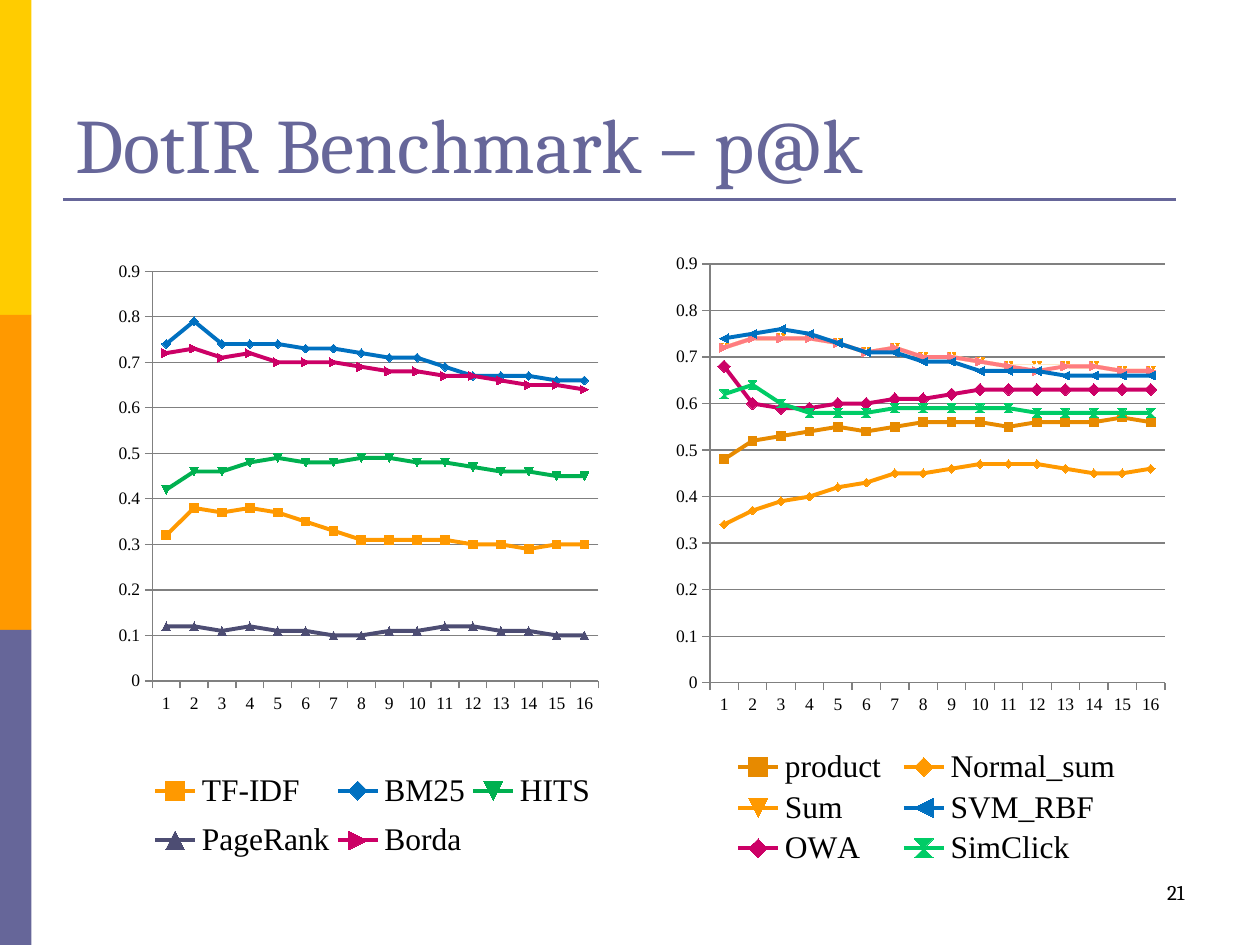
from dataclasses import dataclass

from pptx import Presentation
from pptx.chart.data import CategoryChartData
from pptx.dml.color import RGBColor
from pptx.enum.chart import XL_CHART_TYPE as ChartType
from pptx.enum.chart import XL_LEGEND_POSITION as LegendPos
from pptx.enum.chart import XL_MARKER_STYLE as Marker
from pptx.enum.chart import XL_TICK_MARK as Tick
from pptx.enum.shapes import MSO_CONNECTOR, MSO_SHAPE
from pptx.enum.text import MSO_ANCHOR, PP_ALIGN
from pptx.oxml import parse_xml
from pptx.oxml.ns import nsdecls, qn
from pptx.util import Pt

Box = tuple[float, float, float, float]


@dataclass(frozen=True)
class Theme:
    font: str = "Cambria"
    chart_font: str = "Times New Roman"
    title_size: int = 44
    legend_size: int = 18
    number_size: int = 12
    axis_size: int = 10
    yellow: str = "FFCC00"
    orange: str = "FF9900"
    purple: str = "666699"
    brown: str = "E78A00"
    blue: str = "0070C0"
    green: str = "00B050"
    mint: str = "00CC66"
    navy: str = "4D4D73"
    crimson: str = "CC0066"
    pink: str = "FF7C80"
    white: str = "FFFFFF"
    black: str = "000000"
    grid: str = "808080"


@dataclass(frozen=True)
class Series:
    name: str
    color: str
    values: list[float]
    marker: Marker = Marker.AUTOMATIC
    marker_size: int = 5
    in_legend: bool = True


@dataclass(frozen=True)
class ChartSpec:
    """box is in points; plot and legend are fractions of the chart."""
    box: Box
    plot: Box
    legend: Box
    series: list[Series]


T = Theme()
SUM = [0.72, 0.74, 0.74, 0.74, 0.73, 0.71, 0.72, 0.7,
       0.7, 0.69, 0.68, 0.68, 0.68, 0.68, 0.67, 0.67]

BASELINES = ChartSpec(
    box=(54, 144, 300, 366),
    plot=(0.11, 0.03, 0.85, 0.64),
    legend=(0.1, 0.79, 0.86, 0.18),
    series=[
        Series("TF-IDF", T.orange, [0.32, 0.38, 0.37, 0.38, 0.37, 0.35, 0.33, 0.31,
                                    0.31, 0.31, 0.31, 0.3, 0.3, 0.29, 0.3, 0.3]),
        Series("BM25", T.blue, [0.74, 0.79, 0.74, 0.74, 0.74, 0.73, 0.73, 0.72,
                                0.71, 0.71, 0.69, 0.67, 0.67, 0.67, 0.66, 0.66]),
        Series("HITS", T.green, [0.42, 0.46, 0.46, 0.48, 0.49, 0.48, 0.48, 0.49,
                                 0.49, 0.48, 0.48, 0.47, 0.46, 0.46, 0.45, 0.45]),
        Series("PageRank", T.navy, [0.12, 0.12, 0.11, 0.12, 0.11, 0.11, 0.1, 0.1,
                                    0.11, 0.11, 0.12, 0.12, 0.11, 0.11, 0.1, 0.1]),
        Series("Borda", T.crimson, [0.72, 0.73, 0.71, 0.72, 0.7, 0.7, 0.7, 0.69,
                                    0.68, 0.68, 0.67, 0.67, 0.66, 0.65, 0.65, 0.64]),
    ])

COMBINATIONS = ChartSpec(
    box=(372, 120, 306, 386),
    plot=(0.11, 0.08, 0.85, 0.62),
    legend=(0.14, 0.79, 0.75, 0.19),
    series=[
        Series("product", T.brown, [0.48, 0.52, 0.53, 0.54, 0.55, 0.54, 0.55, 0.56,
                                    0.56, 0.56, 0.55, 0.56, 0.56, 0.56, 0.57, 0.56]),
        Series("Normal_sum", T.orange, [0.34, 0.37, 0.39, 0.4, 0.42, 0.43, 0.45, 0.45,
                                        0.46, 0.47, 0.47, 0.47, 0.46, 0.45, 0.45, 0.46]),
        Series("Sum", T.orange, SUM),
        Series("Series 4", T.white, SUM, in_legend=False),
        Series("Series 5", T.pink, SUM[:11] + [0.67] + SUM[12:], in_legend=False),
        Series("SVM_RBF", T.blue, [0.74, 0.75, 0.76, 0.75, 0.73, 0.71, 0.71, 0.69,
                                   0.69, 0.67, 0.67, 0.67, 0.66, 0.66, 0.66, 0.66]),
        Series("OWA", T.crimson, [0.68, 0.6, 0.59, 0.59, 0.6, 0.6, 0.61, 0.61,
                                  0.62, 0.63, 0.63, 0.63, 0.63, 0.63, 0.63, 0.63],
               Marker.DIAMOND, 7),
        Series("SimClick", T.mint, [0.62, 0.64, 0.6, 0.58, 0.58, 0.58, 0.59, 0.59,
                                    0.59, 0.59, 0.59, 0.58, 0.58, 0.58, 0.58, 0.58]),
    ])


def rgb(color: str) -> RGBColor:
    return RGBColor.from_string(color)


def set_font(font, name: str, size: int, color: str) -> None:
    font.name, font.size = name, Pt(size)
    font.color.rgb = rgb(color)


def set_line(line, color: str, width: float) -> None:
    line.color.rgb = rgb(color)
    line.width = Pt(width)


def set_layout(parent, index: int, box: Box, inner: bool = False) -> None:
    """Give a plot area or legend a fixed place within its chart."""
    for old in parent.findall(qn("c:layout")):
        parent.remove(old)
    target = '<c:layoutTarget val="inner"/>' if inner else ""
    modes = "".join(f'<c:{k}Mode val="edge"/>' for k in "xy")
    sizes = "".join(f'<c:{k} val="{v}"/>' for k, v in zip("xywh", box))
    parent.insert(index, parse_xml(
        f'<c:layout {nsdecls("c")}><c:manualLayout>{target}{modes}{sizes}'
        '</c:manualLayout></c:layout>'))


def add_bar(slide, top: float, color: str) -> None:
    s = slide.shapes.add_shape(MSO_SHAPE.RECTANGLE, 0, Pt(top), Pt(18), Pt(180))
    s.shadow.inherit = False
    s.fill.solid()
    s.fill.fore_color.rgb = rgb(color)
    s.line.fill.background()


def add_rule(slide) -> None:
    c = slide.shapes.add_connector(MSO_CONNECTOR.STRAIGHT, Pt(36), Pt(114), Pt(672), Pt(114))
    set_line(c.line, T.purple, 1.5)
    c.element.spPr.append(parse_xml(f'<a:effectLst {nsdecls("a")}/>'))


def add_title(slide, text: str) -> None:
    s = slide.shapes.title
    s.left, s.top, s.width, s.height = Pt(36), Pt(21.6), Pt(648), Pt(90)
    tf = s.text_frame
    tf.text, tf.vertical_anchor = text, MSO_ANCHOR.BOTTOM
    p = tf.paragraphs[0]
    p.alignment = PP_ALIGN.LEFT
    set_font(p.font, T.font, T.title_size, T.purple)


def add_page_number(slide, text: str) -> None:
    tf = slide.shapes.add_textbox(Pt(516), Pt(492), Pt(168), Pt(36)).text_frame
    tf.word_wrap, tf.vertical_anchor = True, MSO_ANCHOR.MIDDLE
    p = tf.paragraphs[0]
    p.text, p.alignment = text, PP_ALIGN.RIGHT
    set_font(p.font, T.font, T.number_size, T.black)


def style_legend(chart, spec: ChartSpec) -> None:
    chart.has_legend = True
    chart.legend.position = LegendPos.BOTTOM
    chart.legend.include_in_layout = False
    set_font(chart.legend.font, T.chart_font, T.legend_size, T.black)
    legend = chart.element.find(".//" + qn("c:legend"))
    hidden = [i for i, item in enumerate(spec.series) if not item.in_legend]
    for place, i in enumerate(hidden, 1):
        legend.insert(place, parse_xml(
            f'<c:legendEntry {nsdecls("c")}><c:idx val="{i}"/><c:delete val="1"/></c:legendEntry>'))
    set_layout(legend, 1 + len(hidden), spec.legend)


def add_line_chart(slide, spec: ChartSpec) -> None:
    data = CategoryChartData()
    data.categories = [str(k) for k in range(1, 17)]
    for item in spec.series:
        data.add_series(item.name, item.values)
    chart = slide.shapes.add_chart(ChartType.LINE_MARKERS, *map(Pt, spec.box), data).chart
    chart.has_title = False
    set_font(chart.font, T.font, T.axis_size, T.black)
    for axis in (chart.category_axis, chart.value_axis):
        axis.major_tick_mark, axis.minor_tick_mark = Tick.OUTSIDE, Tick.NONE
        set_font(axis.tick_labels.font, T.chart_font, T.axis_size, T.black)
        set_line(axis.format.line, T.grid, 0.75)
    axis = chart.value_axis
    axis.minimum_scale, axis.maximum_scale, axis.major_unit = 0, 0.9, 0.1
    axis.has_major_gridlines = True
    set_line(axis.major_gridlines.format.line, T.grid, 0.75)
    chart.plots[0].vary_by_categories = False
    for ser, item in zip(chart.plots[0].series, spec.series):
        ser.smooth = False
        set_line(ser.format.line, item.color, 2.25)
        ser.marker.style, ser.marker.size = item.marker, item.marker_size
        ser.marker.format.fill.solid()
        ser.marker.format.fill.fore_color.rgb = rgb(item.color)
        set_line(ser.marker.format.line, item.color, 0.75)
    set_layout(chart.element.find(".//" + qn("c:plotArea")), 0, spec.plot, inner=True)
    style_legend(chart, spec)


def main() -> None:
    prs = Presentation()
    prs.slide_width, prs.slide_height = Pt(720), Pt(540)
    slide = prs.slides.add_slide(prs.slide_layouts[5])
    for i, color in enumerate((T.yellow, T.orange, T.purple)):
        add_bar(slide, 180 * i, color)
    add_rule(slide)
    add_title(slide, "DotIR Benchmark – p@k")
    add_page_number(slide, "21")
    for spec in (BASELINES, COMBINATIONS):
        add_line_chart(slide, spec)
    prs.save("out.pptx")


if __name__ == "__main__":
    main()
